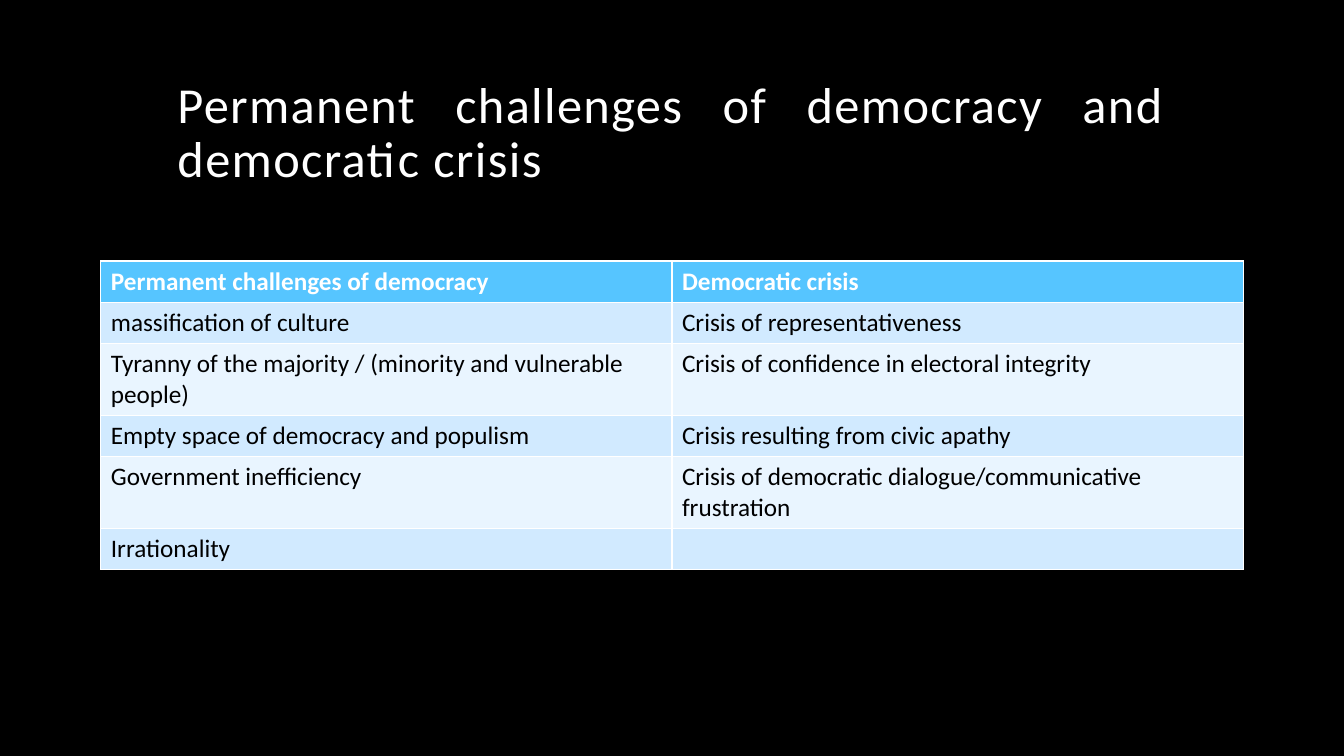
import pptx
import pptx.util
import pptx.dml.color
import pptx.enum.text

Inches, Pt = pptx.util.Inches, pptx.util.Pt
RGBColor = pptx.dml.color.RGBColor

TITLE = "Permanent challenges of democracy and democratic crisis"
ROWS = [
    ("Permanent challenges of democracy", "Democratic crisis"),
    ("massification of culture", "Crisis of representativeness"),
    ("Tyranny of the majority / (minority and vulnerable people)",
     "Crisis of confidence in electoral integrity"),
    ("Empty space of democracy and populism", "Crisis resulting from civic apathy"),
    ("Government inefficiency",
     "Crisis of democratic dialogue/communicative frustration"),
    ("Irrationality", ""),
]
ROW_HEIGHTS = [0.41, 0.41, 0.7, 0.41, 0.7, 0.41]
FONT = "Calibri"
BLACK = RGBColor(0x00, 0x00, 0x00)
WHITE = RGBColor(0xFF, 0xFF, 0xFF)
HEADER_BLUE = RGBColor(0x56, 0xC5, 0xFF)
BANDS = [RGBColor(0xE9, 0xF5, 0xFF), RGBColor(0xD1, 0xEA, 0xFF)]


def style_font(font, size, color, bold=False):
    font.name = FONT
    font.size = Pt(size)
    font.bold = bold
    font.color.rgb = color


def add_title(page):
    box = page.shapes.title
    box.left, box.top = Inches(1.66), Inches(0.42)
    box.width, box.height = Inches(10), Inches(1.5)
    frame = box.text_frame
    frame.text = TITLE
    frame.word_wrap = True
    frame.auto_size = pptx.enum.text.MSO_AUTO_SIZE.NONE
    frame.vertical_anchor = pptx.enum.text.MSO_ANCHOR.BOTTOM
    para = frame.paragraphs[0]
    para.alignment = pptx.enum.text.PP_ALIGN.JUSTIFY
    para.line_spacing = 0.9
    span = para.runs[0]
    style_font(span.font, 36, WHITE)
    span.font._element.set("spc", "100")


def add_comparison(page):
    table = page.shapes.add_table(
        len(ROWS), len(ROWS[0]), Inches(1), Inches(2.59),
        Inches(11.33), Inches(sum(ROW_HEIGHTS))).table
    for r, (texts, height) in enumerate(zip(ROWS, ROW_HEIGHTS)):
        table.rows[r].height = Inches(height)
        header = r == 0
        for c, text in enumerate(texts):
            cell = table.cell(r, c)
            cell.fill.solid()
            cell.fill.fore_color.rgb = HEADER_BLUE if header else BANDS[r % 2]
            cell.text = text
            for span in cell.text_frame.paragraphs[0].runs:
                style_font(span.font, 18, WHITE if header else BLACK, header)


def main():
    """Build the slide comparing permanent challenges with democratic crisis."""
    deck = pptx.Presentation()
    deck.slide_width, deck.slide_height = Inches(13.33), Inches(7.5)
    page = deck.slides.add_slide(deck.slide_layouts[5])
    page.background.fill.solid()
    page.background.fill.fore_color.rgb = BLACK
    add_title(page)
    add_comparison(page)
    deck.save("out.pptx")


if __name__ == "__main__":
    main()
